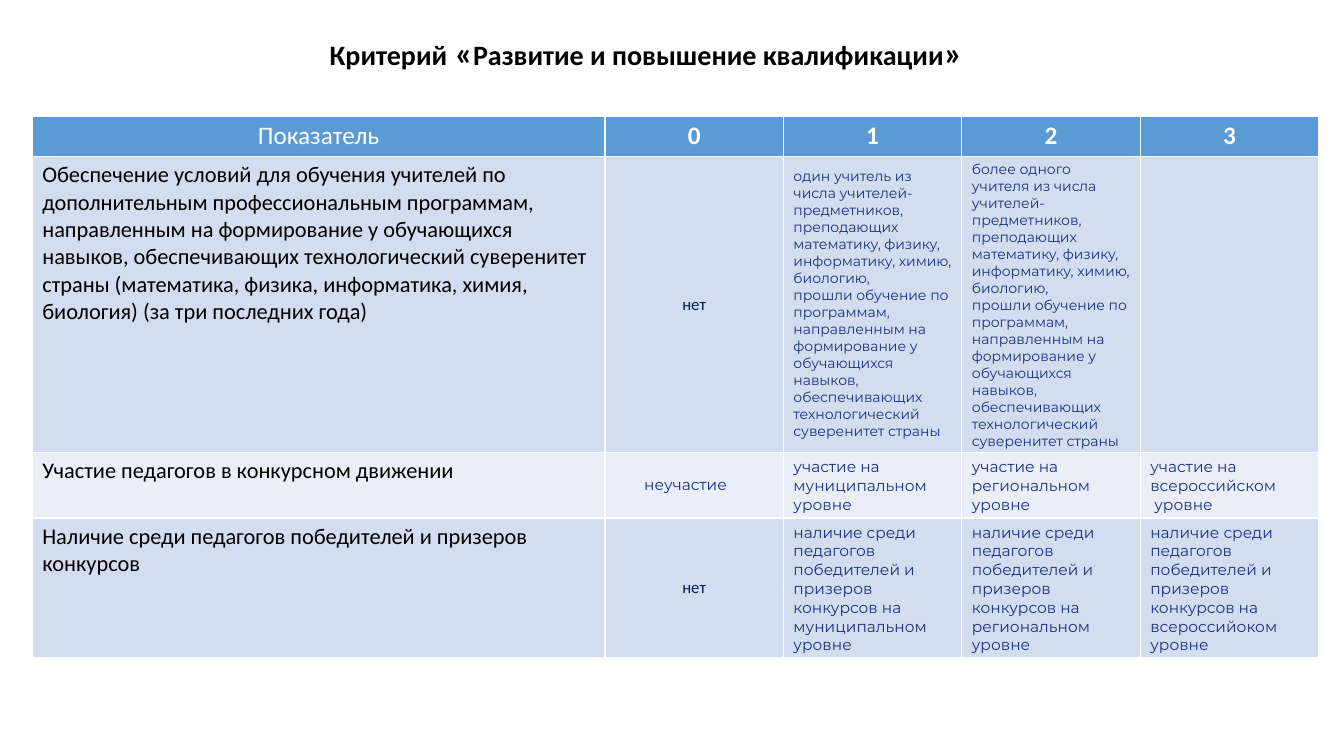
from pptx import Presentation
from pptx.dml.color import RGBColor
from pptx.enum.text import MSO_ANCHOR, MSO_AUTO_SIZE, PP_ALIGN
from pptx.util import Inches, Pt

TOP, MIDDLE = MSO_ANCHOR.TOP, MSO_ANCHOR.MIDDLE
LEFT, CENTER = PP_ALIGN.LEFT, PP_ALIGN.CENTER

COLORS = {
    "black": "000000",
    "white": "FFFFFF",
    "navy": "002060",
    "indigo": "1B3181",
    "header": "5B9BD5",
    "odd": "D2DEEF",
    "even": "EAEFF7",
}

TITLE = [
    ("Критерий", 20),
    (" «", 24),
    ("Развитие и повышение квалификации", 20),
    ("»", 24),
]

TRAINING = (
    "прошли обучение по программам, направленным на формирование у обучающихся "
    "навыков, обеспечивающих технологический суверенитет страны"
)
SUBJECTS = "учителей-предметников, преподающих математику, физику, информатику, химию, биологию,"
WINNERS = "наличие среди педагогов победителей и призеров конкурсов на {} уровне"

ROWS = [
    ["Показатель", "0", "1", "2", "3"],
    [
        "Обеспечение условий для обучения учителей по дополнительным профессиональным "
        "программам, направленным на формирование у обучающихся навыков, обеспечивающих "
        "технологический суверенитет страны (математика, физика, информатика, химия, "
        "биология) (за три последних года)",
        "нет",
        f"один учитель из числа {SUBJECTS}\n{TRAINING}",
        f"более одного учителя из числа {SUBJECTS}\n{TRAINING}",
        "",
    ],
    [
        "Участие педагогов в конкурсном движении",
        "неучастие",
        "участие на муниципальном уровне",
        "участие на региональном уровне",
        "участие на всероссийском\n уровне",
    ],
    [
        "Наличие среди педагогов победителей и призеров конкурсов",
        "нет",
        WINNERS.format("муниципальном"),
        WINNERS.format("региональном"),
        WINNERS.format("всероссийоком"),
    ],
]

COLUMN_WIDTHS = [5.68] + [1.77] * 4
ROW_HEIGHTS = [0.39, 2.9, 0.65, 1.35]


def style_font(font, name, size, color, bold=False):
    font.name = name
    font.size = Pt(size)
    font.bold = bold
    font.color.rgb = RGBColor.from_string(COLORS[color])


def cell_style(row, column, text):
    if row == 0:
        return "Calibri", 18, "white", column > 0
    if column == 0:
        return "Calibri", 16, "black"
    if text == "нет":
        return "Calibri", 12, "navy"
    return "Montserrat", 10 if row == 1 else 11, "indigo"


def add_title(page):
    title = page.shapes.title
    title.left, title.top = Inches(3.17), Inches(0.27)
    title.width, title.height = Inches(6.52), Inches(0.5)
    frame = title.text_frame
    frame.word_wrap = False
    frame.auto_size = MSO_AUTO_SIZE.SHAPE_TO_FIT_TEXT
    frame.vertical_anchor = TOP
    para = frame.paragraphs[0]
    para.alignment = LEFT
    for text, size in TITLE:
        span = para.add_run()
        span.text = text
        style_font(span.font, "Calibri", size, "black", True)


def fill_cell(cell, row, column, text):
    band = "header" if row == 0 else "odd" if row % 2 else "even"
    cell.fill.solid()
    cell.fill.fore_color.rgb = RGBColor.from_string(COLORS[band])
    cell.vertical_anchor = TOP if row and column == 0 else MIDDLE
    cell.text_frame.text = text
    for para in cell.text_frame.paragraphs:
        para.alignment = CENTER if row == 0 or column == 1 else LEFT
        style_font(para.font, *cell_style(row, column, text))
        for span in para.runs:
            style_font(span.font, *cell_style(row, column, text))


def add_criteria_table(page):
    table = page.shapes.add_table(
        len(ROWS), len(COLUMN_WIDTHS), Inches(0.32), Inches(1.15),
        Inches(sum(COLUMN_WIDTHS)), Inches(sum(ROW_HEIGHTS)),
    ).table
    for column, width in zip(table.columns, COLUMN_WIDTHS):
        column.width = Inches(width)
    for row, height in zip(table.rows, ROW_HEIGHTS):
        row.height = Inches(height)
    for row, texts in enumerate(ROWS):
        for column, text in enumerate(texts):
            fill_cell(table.cell(row, column), row, column, text)
    table.cell(2, 1).margin_right = Inches(0.27)


def main():
    deck = Presentation()
    deck.slide_width, deck.slide_height = Inches(13.33), Inches(7.5)
    page = deck.slides.add_slide(deck.slide_layouts[5])
    add_title(page)
    add_criteria_table(page)
    deck.save("out.pptx")


if __name__ == "__main__":
    main()
